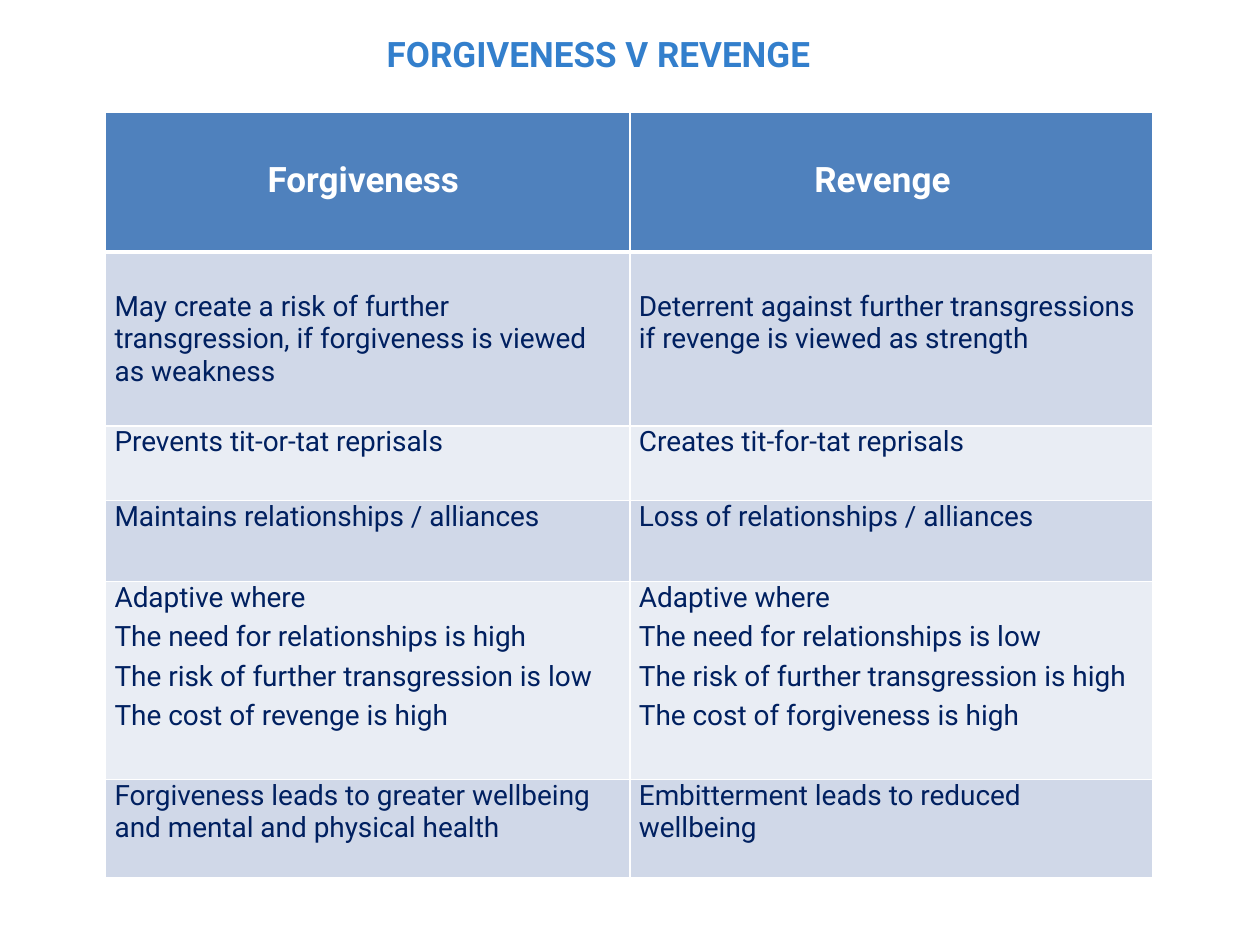
from dataclasses import dataclass
from typing import Optional

from pptx import Presentation
from pptx.dml.color import RGBColor as Rgb
from pptx.enum.text import MSO_ANCHOR as Anchor, MSO_AUTO_SIZE as Fit, PP_ALIGN as Align
from pptx.oxml import parse_xml
from pptx.oxml.ns import nsdecls
from pptx.util import Cm, Pt


@dataclass(frozen=True)
class Theme:
    font: str = "Roboto"
    title: str = "337FCC"
    head: str = "4F81BD"
    ink: str = "002060"
    white: str = "FFFFFF"
    bands: tuple[str, str] = ("D0D8E8", "E9EDF4")
    large: int = 20
    small: int = 16
    gap: int = 2
    side: float = 0.18


@dataclass(frozen=True)
class Row:
    height: float
    left: str
    right: str
    top: float = 0


THEME = Theme()
WIDTHS = (10.57, 10.54)
ROWS = (
    Row(2.82, "Forgiveness", "Revenge", 0.97),
    Row(
        3.51,
        "May create a risk of further transgression, if forgiveness is viewed as weakness",
        "Deterrent against further transgressions if revenge is viewed as strength",
        0.77,
    ),
    Row(1.5, "Prevents tit-or-tat reprisals", "Creates tit-for-tat reprisals"),
    Row(1.63, "Maintains relationships / alliances", "Loss of relationships / alliances"),
    Row(
        3.99,
        "Adaptive where\nThe need for relationships is high\n"
        "The risk of further transgression is low\nThe cost of revenge is high",
        "Adaptive where\nThe need for relationships is low\n"
        "The risk of further transgression is high\nThe cost of forgiveness is high",
    ),
    Row(
        1.98,
        "Forgiveness leads to greater wellbeing and mental and physical health",
        "Embitterment leads to reduced wellbeing",
    ),
)


def style(para, size: int, color: str, bold: bool, align: Optional[Align] = Align.LEFT) -> None:
    para.alignment = align
    font = para.font
    font.name, font.size, font.bold = THEME.font, Pt(size), bold
    font.color.rgb = Rgb.from_string(color)


def add_title(slide, text: str) -> None:
    title = slide.shapes.title
    title.left, title.top, title.width, title.height = Cm(7.54), Cm(0.45), Cm(10.31), Cm(0.97)
    frame = title.text_frame
    frame.text = text
    frame.word_wrap = True
    frame.auto_size = Fit.NONE
    frame.vertical_anchor = Anchor.TOP
    para = frame.paragraphs[0]
    para.line_spacing = 1.1
    style(para, THEME.large, THEME.title, True)


def add_edges(cell, top: int, bottom: int) -> None:
    props = cell._tc.get_or_add_tcPr()
    edges = (("L", 1), ("R", 1), ("T", top), ("B", bottom))
    for spot, (side, width) in enumerate(edges):
        line = parse_xml(
            f'<a:ln{side} {nsdecls("a")} w="{Pt(width)}"><a:solidFill>'
            f'<a:srgbClr val="{THEME.white}"/></a:solidFill></a:ln{side}>'
        )
        props.insert(spot, line)


def fill_cell(cell, text: str, row: int, col: int, top: float) -> None:
    head = row == 0
    cell.text = text
    cell.margin_left = Cm(THEME.side)
    cell.margin_right = Cm(THEME.side * (col + 2 if head else 1))
    cell.margin_top, cell.margin_bottom = Cm(top), 0
    cell.vertical_anchor = Anchor.TOP
    cell.fill.solid()
    cell.fill.fore_color.rgb = Rgb.from_string(THEME.head if head else THEME.bands[(row - 1) % 2])
    for para in cell.text_frame.paragraphs:
        para.space_before = para.space_after = Pt(THEME.gap)
        if head:
            style(para, THEME.large, THEME.white, True, Align.CENTER)
        else:
            style(para, THEME.small, THEME.ink, False)
    add_edges(cell, 3 if row == 1 else 1, 3 if head else 1)


def add_grid(slide, rows: tuple[Row, ...]) -> None:
    height = sum(row.height for row in rows)
    table = slide.shapes.add_table(
        len(rows), len(WIDTHS), Cm(2.13), Cm(2.26), Cm(sum(WIDTHS)), Cm(height)
    ).table
    table.first_row = table.horz_banding = False
    for col, width in zip(table.columns, WIDTHS):
        col.width = Cm(width)
    for i, row in enumerate(rows):
        table.rows[i].height = Cm(row.height)
        for j, text in enumerate((row.left, row.right)):
            fill_cell(table.cell(i, j), text, i, j, row.top)


def main() -> None:
    deck = Presentation()
    deck.slide_width, deck.slide_height = Cm(25.4), Cm(19.05)
    slide = deck.slides.add_slide(deck.slide_layouts[5])
    add_title(slide, "FORGIVENESS V REVENGE")
    add_grid(slide, ROWS)
    deck.save("out.pptx")


if __name__ == "__main__":
    main()
